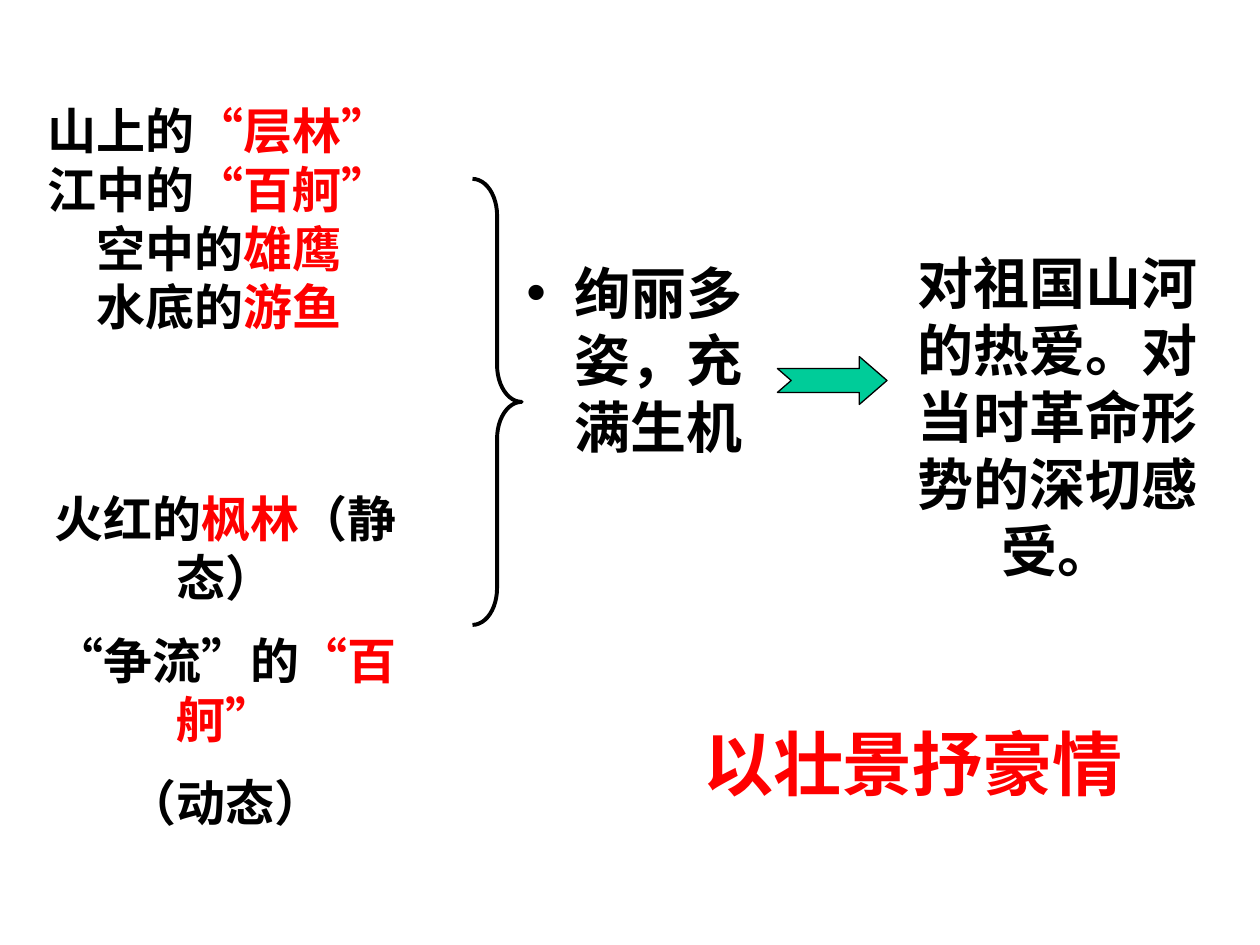
from pptx import Presentation
from pptx.dml.color import RGBColor
from pptx.enum.shapes import MSO_SHAPE as Shape
from pptx.enum.text import PP_ALIGN as Align
from pptx.oxml.ns import qn
from pptx.util import Inches, Pt
from lxml.etree import SubElement

BLACK = RGBColor(0x00, 0x00, 0x00)
RED = RGBColor(0xFF, 0x00, 0x00)
GREEN = RGBColor(0x00, 0xCC, 0x99)
SANS = "Noto Sans CJK SC"
SERIF = "Times New Roman"
QUOTE = "Arial"


def add_run(para, text, size, color, font):
    run = para.add_run()
    run.text = text
    run.font.size = Pt(size)
    run.font.bold = True
    run.font.name = font
    run.font.color.rgb = color
    # East Asian glyphs always come from the sans face
    SubElement(run.font._element, qn("a:ea")).set("typeface", SANS)


def add_box(slide, x, y, w, h):
    frame = slide.shapes.add_textbox(
        Inches(x), Inches(y), Inches(w), Inches(h)).text_frame
    frame.word_wrap = True
    return frame


def add_para(frame, lines, size, font=SANS, align=Align.CENTER, before=0.5):
    """Each line is a list of (text, colour) runs."""
    first = frame.paragraphs[0]
    para = frame.add_paragraph() if first.runs else first
    para.alignment = align
    para.space_before = Pt(size * before)
    para.line_spacing = Pt(size * 1.2)
    for i, line in enumerate(lines):
        if i:
            para.add_line_break()
        for text, color in line:
            add_run(para, text, size, color, QUOTE if text in "“”" else font)
    return para


def add_bullet(para):
    props = para._p.get_or_add_pPr()
    props.set("marL", str(Inches(0.38)))
    props.set("indent", str(Inches(-0.38)))
    SubElement(props, qn("a:buFont")).set("typeface", "Arial")
    SubElement(props, qn("a:buChar")).set("char", "•")


def add_form(slide, kind, x, y, w, h, adjust, width, fill=None):
    form = slide.shapes.add_shape(
        kind, Inches(x), Inches(y), Inches(w), Inches(h))
    form.shadow.inherit = False
    for i, value in enumerate(adjust):
        form.adjustments[i] = value
    form.line.color.rgb = BLACK
    form.line.width = Pt(width)
    if fill is None:
        form.fill.background()
    else:
        form.fill.solid()
        form.fill.fore_color.rgb = fill


def quoted(text, color):
    return [("“", color), (text, color), ("”", color)]


def main():
    prs = Presentation()
    prs.slide_width, prs.slide_height = Inches(10), Inches(7.5)
    slide = prs.slides.add_slide(prs.slide_layouts[6])

    # Scenes of the poem
    scenes = add_box(slide, 0.25, 0.75, 3.23, 4.77)
    scenes.margin_right = Inches(0.35)
    add_para(scenes, [
        [("山上的", BLACK), *quoted("层林", RED)],
        [("江中的", BLACK), *quoted("百舸", RED)],
        [("空中的", BLACK), ("雄鹰", RED)],
        [("水底的", BLACK), ("游鱼", RED)],
    ], 28)

    # Stillness and motion
    moods = add_box(slide, 0, 3.83, 3.58, 2.67)
    for line in (
        [("火红的", BLACK), ("枫林", RED), ("（静态）", BLACK)],
        [*quoted("争流", BLACK), ("的", BLACK), *quoted("百舸", RED)],
        [("（动态）", BLACK)],
    ):
        add_para(moods, [line], 28)

    # Brace that gathers the scenes
    add_form(slide, Shape.RIGHT_BRACE, 3.75, 1.42, 0.39, 3.54,
             (0.749, 0.5), 2.25)

    # Feeling, arrow and theme
    add_para(add_box(slide, 7.17, 1.92, 2.45, 3.57),
             [[("对祖国山河的热爱。对当时革命形势的深切感受。", BLACK)]],
             32, SERIF)
    add_form(slide, Shape.NOTCHED_RIGHT_ARROW, 6.17, 2.83, 0.87, 0.38,
             (0.5, 0.578), 0.75, GREEN)
    add_para(add_box(slide, 5, 5.67, 4.49, 0.77),
             [[("以壮景抒豪情", RED)]], 40, SERIF)

    # Bulleted impression
    impress = add_box(slide, 4.08, 2, 2.08, 3.92)
    add_bullet(add_para(impress, [[("绚丽多姿，充满生机", BLACK)]],
                        32, align=Align.LEFT, before=0.2))

    prs.save("out.pptx")


if __name__ == "__main__":
    main()
